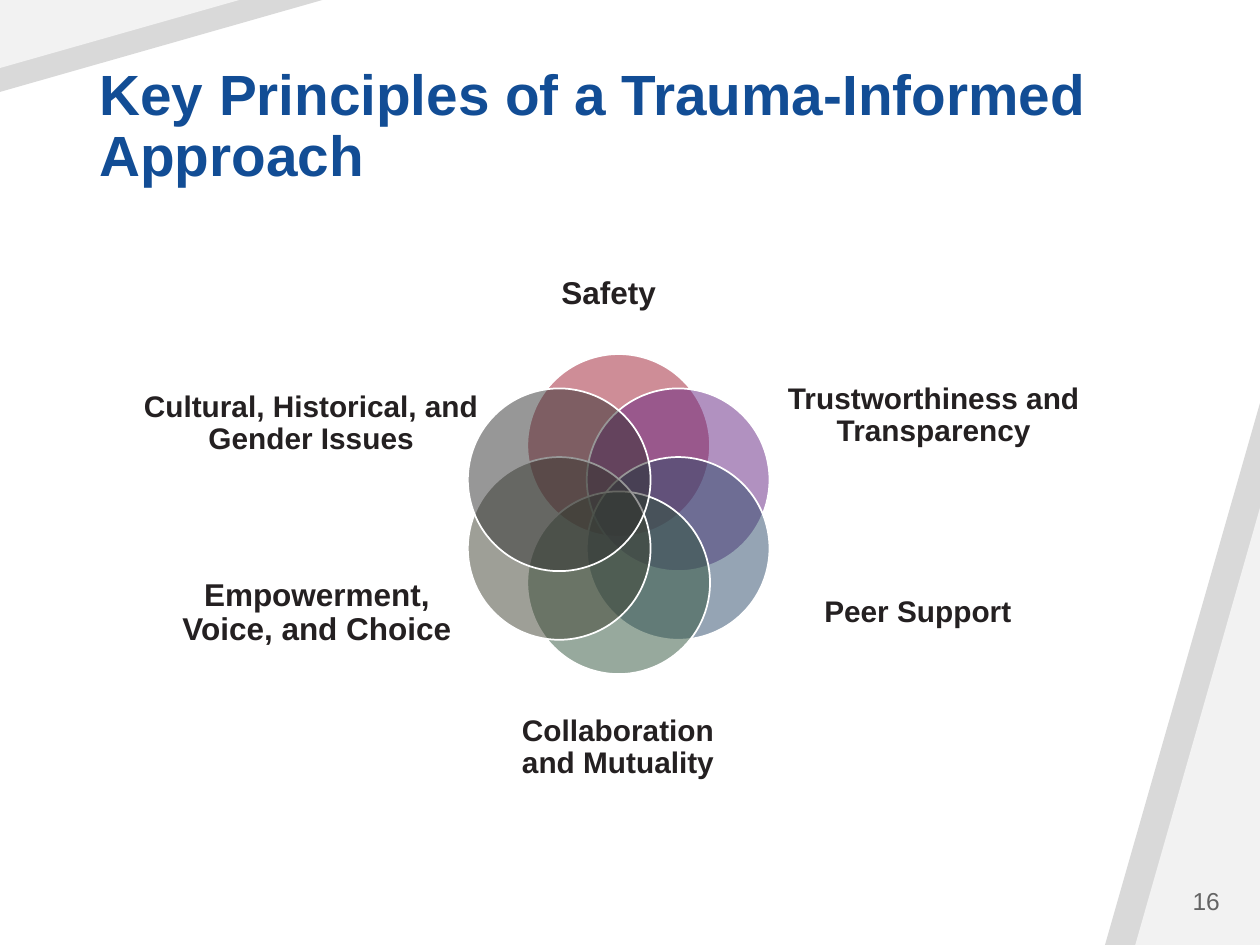
import math
from dataclasses import dataclass

from lxml import etree
from pptx import Presentation
from pptx.dml.color import RGBColor
from pptx.enum import shapes, text
from pptx.oxml import ns
from pptx.util import Inches, Pt


@dataclass(frozen=True)
class Theme:
    font: str = "Arial"
    title: str = "124D95"
    label: str = "242021"
    number: str = "646464"
    white: str = "FFFFFF"
    band: str = "D9D9D9"
    corner: str = "F2F2F2"
    title_size: float = 32.4
    large_size: float = 18
    label_size: float = 17
    number_size: float = 14


theme = Theme()
prs = Presentation()
prs.slide_width, prs.slide_height = Inches(10), Inches(7.5)
slide = prs.slides.add_slide(prs.slide_layouts[6])


def add_text(words, box, size, color, align, anchor, bold=True, inset=None, spacing=0.9):
    tf = slide.shapes.add_textbox(*map(Inches, box)).text_frame
    tf.word_wrap = True
    tf.vertical_anchor = anchor
    if inset is not None:
        tf.margin_left = tf.margin_right = tf.margin_top = tf.margin_bottom = Inches(inset)
    p = tf.paragraphs[0]
    p.text = words
    p.alignment = align
    p.line_spacing = spacing
    font = p.runs[0].font
    font.name, font.size, font.bold = theme.font, Pt(size), bold
    font.color.rgb = RGBColor.from_string(color)


def paint(s, color):
    s.shadow.inherit = False
    s.fill.solid()
    s.fill.fore_color.rgb = RGBColor.from_string(color)


# Corner triangles, each grey band under its lighter corner
corners = [
    (theme.band, [(8.77, 7.5), (10, 3.2), (10, 7.5)]),
    (theme.corner, [(9.01, 7.5), (10, 4.03), (10, 7.5)]),
    (theme.band, [(0, 0), (2.56, 0), (0, 0.73)]),
    (theme.corner, [(0, 0), (1.9, 0), (0, 0.54)]),
]
for color, points in corners:
    start, *rest = [(Inches(x), Inches(y)) for x, y in points]
    builder = slide.shapes.build_freeform(*start)
    builder.add_line_segments(rest, close=True)
    s = builder.convert_to_shape()
    paint(s, color)
    s.line.fill.background()

# Title
add_text("Key Principles of a Trauma-Informed Approach", (0.69, 0.4, 8.7, 1.15),
         theme.title_size, theme.title, text.PP_ALIGN.LEFT, text.MSO_ANCHOR.BOTTOM)

# Six overlapping circles, clockwise from the top, with their labels
center_x, center_y, ring, diameter = 4.91, 4.08, 0.545, 1.45
principles = [
    ("Safety", "9E1C30", theme.large_size, (3.69, 1.84, 2.28, 0.99)),
    ("Trustworthiness and Transparency", "652583", theme.label_size, (6.25, 2.76, 2.32, 1.08)),
    ("Peer Support", "2C4B6A", theme.label_size, (6.05, 4.26, 2.47, 1.21)),
    ("Collaboration and Mutuality", "30543C", theme.label_size, (4, 5.44, 1.81, 0.99)),
    ("Empowerment, Voice, and Choice", "3E4131", theme.large_size, (1.42, 4.26, 2.19, 1.21)),
    ("Cultural, Historical, and Gender Issues", "303030", theme.label_size,
     (1.02, 2.98, 2.9, 0.77)),
]
for i, (words, color, size, box) in enumerate(principles):
    angle = math.radians(60 * i)
    left = center_x + ring * math.sin(angle) - diameter / 2
    top = center_y - ring * math.cos(angle) - diameter / 2
    s = slide.shapes.add_shape(shapes.MSO_SHAPE.OVAL, Inches(left), Inches(top),
                               Inches(diameter), Inches(diameter))
    paint(s, color)
    fill_color = s._element.spPr.find(ns.qn("a:solidFill")).find(ns.qn("a:srgbClr"))
    etree.SubElement(fill_color, ns.qn("a:alpha")).set("val", "50000")
    s.line.color.rgb = RGBColor.from_string(theme.white)
    s.line.width = Pt(1)
    add_text(words, box, size, theme.label, text.PP_ALIGN.CENTER,
             text.MSO_ANCHOR.MIDDLE, inset=0)

# Slide number
add_text("16", (8.96, 6.95, 0.82, 0.4), theme.number_size, theme.number,
         text.PP_ALIGN.RIGHT, text.MSO_ANCHOR.MIDDLE, bold=False, spacing=1.0)

prs.save("out.pptx")
